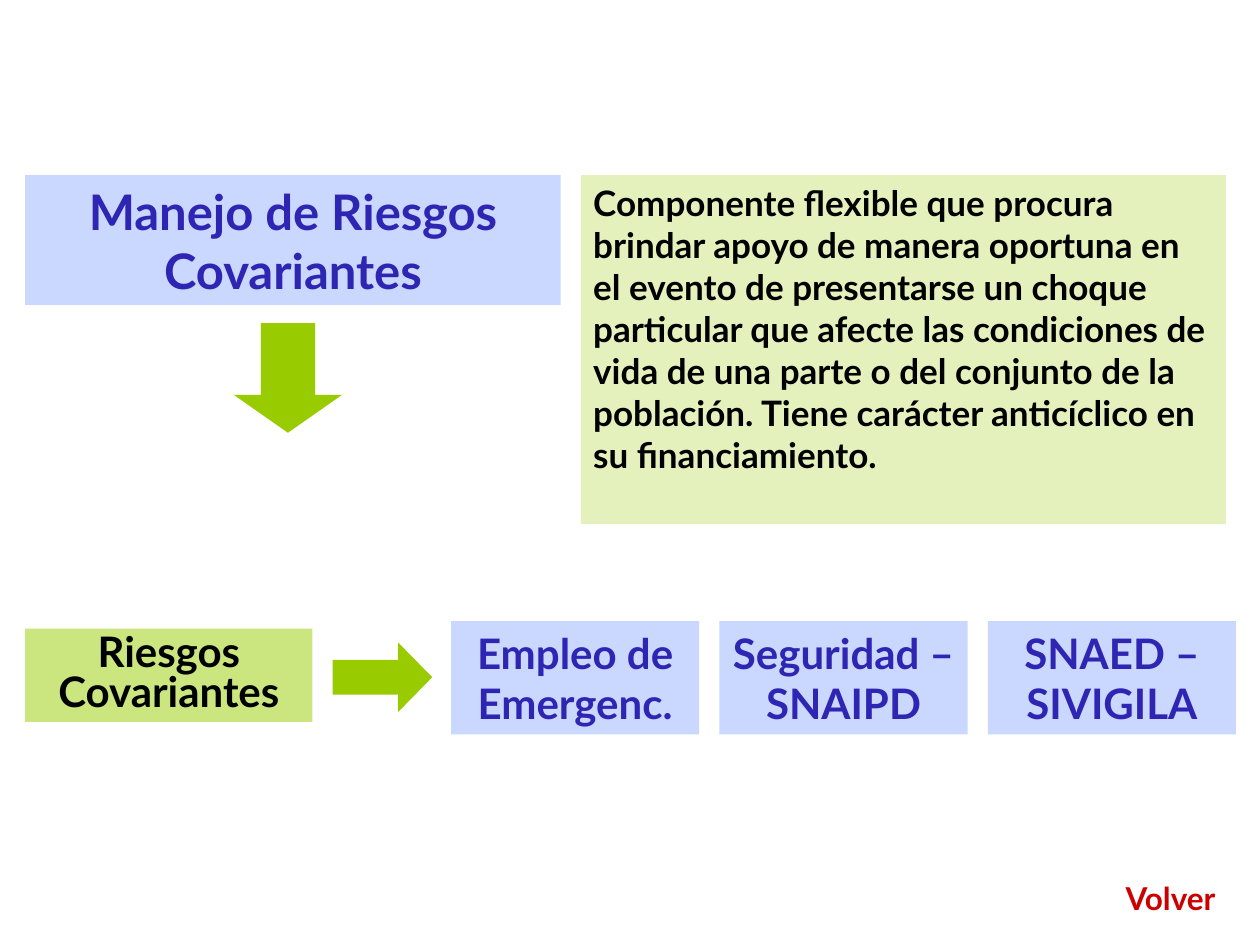
"""Build the slide on managing covariant risks."""
from dataclasses import dataclass
from typing import Optional

import lxml.etree
import pptx
import pptx.dml.color
import pptx.enum.shapes
import pptx.enum.text
import pptx.oxml.ns
import pptx.util

COLUMNS, ROWS = 100, 75
BLUE, GREEN, INDIGO, BLACK, RED = "3366FF", "99CC00", "2F25B3", "000000", "CC0000"
SHAPE = pptx.enum.shapes.MSO_SHAPE
ALIGN = pptx.enum.text.PP_ALIGN
ANCHOR = pptx.enum.text.MSO_ANCHOR


@dataclass(frozen=True)
class Area:
    """A region in grid columns and rows."""
    column: float
    row: float
    columns: float
    rows: float


@dataclass(frozen=True)
class Panel:
    """A block of text with an optional translucent fill."""
    text: str
    area: Area
    size: int
    color: str
    fill: Optional[str] = None
    opacity: int = 26
    align: ALIGN = ALIGN.CENTER
    anchor: ANCHOR = ANCHOR.TOP
    spacing: float = 1.0


@dataclass(frozen=True)
class Arrow:
    """A block arrow with its head length and rotation."""
    area: Area
    head: float
    rotation: float = 0


def rgb(value: str) -> pptx.dml.color.RGBColor:
    """Turn a hex string into a colour."""
    return pptx.dml.color.RGBColor.from_string(value)


def apply(target, values: dict) -> None:
    """Set every attribute named in the format values."""
    for name, value in values.items():
        setattr(target, name, value)


def place(area: Area, width: int, height: int) -> dict:
    """Convert a grid region to slide lengths."""
    return {
        "left": round(area.column * width / COLUMNS),
        "top": round(area.row * height / ROWS),
        "width": round(area.columns * width / COLUMNS),
        "height": round(area.rows * height / ROWS),
    }


def paint(shape, color: str, opacity: int = 100) -> None:
    """Fill a shape without an outline at the given opacity."""
    shape.fill.solid()
    shape.fill.fore_color.rgb = rgb(color)
    shape.line.fill.background()
    if opacity < 100:
        swatch = shape.element.spPr.find(".//" + pptx.oxml.ns.qn("a:srgbClr"))
        alpha = lxml.etree.SubElement(swatch, pptx.oxml.ns.qn("a:alpha"))
        alpha.set("val", str(opacity * 1000))


def fill_panel(shape, panel: Panel) -> None:
    """Write and format the panel's text and background."""
    if panel.fill:
        paint(shape, panel.fill, panel.opacity)
    frame = shape.text_frame
    frame.text = panel.text
    apply(frame, {
        "word_wrap": True,
        "auto_size": pptx.enum.text.MSO_AUTO_SIZE.NONE,
        "vertical_anchor": panel.anchor,
    })
    paragraph = frame.paragraphs[0]
    apply(paragraph, {"alignment": panel.align, "line_spacing": panel.spacing})
    font = paragraph.runs[0].font
    apply(font, {"name": "Lato", "size": pptx.util.Pt(panel.size), "bold": True})
    font.color.rgb = rgb(panel.color)


def add_panel(slide, panel: Panel, width: int, height: int) -> None:
    """Draw a filled rectangle or a plain text box."""
    bounds = place(panel.area, width, height).values()
    if panel.fill:
        shape = slide.shapes.add_shape(SHAPE.RECTANGLE, *bounds)
        shape.shadow.inherit = False
    else:
        shape = slide.shapes.add_textbox(*bounds)
    fill_panel(shape, panel)


def add_arrow(slide, arrow: Arrow, width: int, height: int) -> None:
    """Draw a green block arrow."""
    bounds = place(arrow.area, width, height).values()
    shape = slide.shapes.add_shape(SHAPE.RIGHT_ARROW, *bounds)
    shape.shadow.inherit = False
    shape.rotation = arrow.rotation
    shape.adjustments[1] = arrow.head
    paint(shape, GREEN)


HEADING = Panel("Manejo de Riesgos Covariantes", Area(2, 13.9, 42.5, 10.3), 28, INDIGO, BLUE)
DESCRIPTION = Panel(
    "Componente flexible que procura brindar apoyo de manera oportuna en el evento de "
    "presentarse un choque particular que afecte las condiciones de vida de una parte o "
    "del conjunto de la población. Tiene carácter anticíclico en su financiamiento.",
    Area(46.1, 13.9, 51.2, 27.7), 20, BLACK, GREEN, align=ALIGN.LEFT)
RISKS = Panel("Riesgos Covariantes", Area(2, 49.9, 22.8, 7.4), 24, BLACK, GREEN,
              opacity=50, anchor=ANCHOR.MIDDLE, spacing=0.8)
BACK = Panel("Volver", Area(87.8, 69.3, 10.2, 4), 18, RED)
PROGRAMS = ("Empleo de Emergenc.", "Seguridad – SNAIPD", "SNAED – SIVIGILA")
PROGRAM_START, PROGRAM_WIDTH, PROGRAM_GAP = 35.8, 19.7, 1.6
ARROWS = (
    Arrow(Area(18.5, 25.7, 8.7, 8.6), 0.35, rotation=90),
    Arrow(Area(26.4, 51, 7.9, 5.5), 0.49),
)


def main() -> None:
    """Assemble and save the presentation."""
    deck = pptx.Presentation()
    apply(deck, {"slide_width": pptx.util.Inches(10), "slide_height": pptx.util.Inches(7.5)})
    size = deck.slide_width, deck.slide_height
    slide = deck.slides.add_slide(deck.slide_layouts[5])

    title = slide.shapes.title
    apply(title, place(HEADING.area, *size))
    fill_panel(title, HEADING)

    programs = [
        Panel(name, Area(PROGRAM_START + index * (PROGRAM_WIDTH + PROGRAM_GAP), 49.3,
                         PROGRAM_WIDTH, 9), 24, INDIGO, BLUE)
        for index, name in enumerate(PROGRAMS)
    ]
    for panel in (DESCRIPTION, RISKS, BACK, *programs):
        add_panel(slide, panel, *size)
    for arrow in ARROWS:
        add_arrow(slide, arrow, *size)
    deck.save("out.pptx")


if __name__ == "__main__":
    main()
